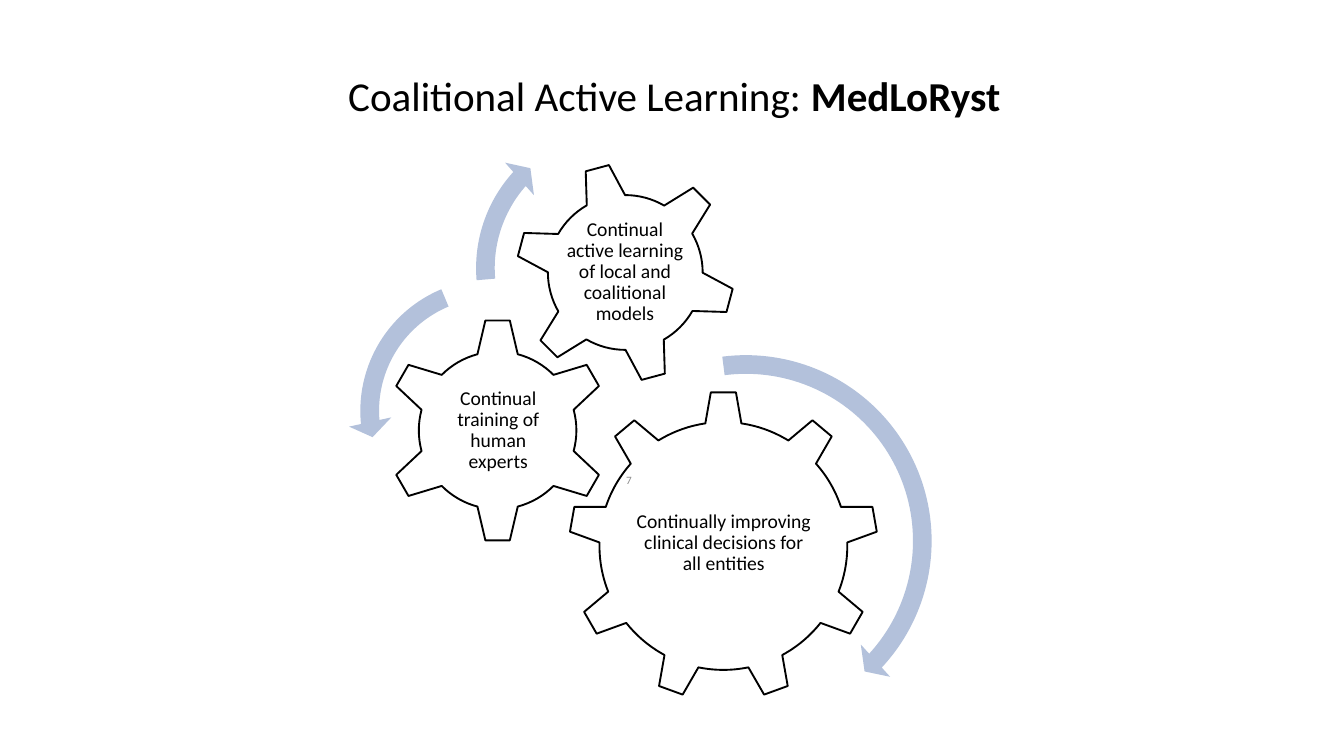
from pptx import Presentation
from pptx.dml.color import RGBColor
from pptx.enum.shapes import MSO_SHAPE
from pptx.enum.text import MSO_ANCHOR, PP_ALIGN
from pptx.util import Inches, Pt

CENTER, RIGHT = PP_ALIGN.CENTER, PP_ALIGN.RIGHT
MIDDLE = MSO_ANCHOR.MIDDLE
GEAR_SIX, GEAR_NINE = MSO_SHAPE.GEAR_6, MSO_SHAPE.GEAR_9
CLOCKWISE = MSO_SHAPE.CIRCULAR_ARROW
COUNTERCLOCKWISE = MSO_SHAPE.LEFT_CIRCULAR_ARROW

BLACK = RGBColor(0x00, 0x00, 0x00)
WHITE = RGBColor(0xFF, 0xFF, 0xFF)
GRAY = RGBColor(0x8C, 0x8C, 0x8C)
PALE_BLUE = RGBColor(0xB3, 0xC1, 0xDB)

GEARS = [
    (GEAR_NINE, (8.46, 5.82, 4.61, 4.61), 0, None,
     "Continually improving clinical decisions for all entities", (9.39, 6.9, 2.76, 2.37)),
    (GEAR_SIX, (5.73, 4.73, 3.35, 3.35), 0, WHITE,
     "Continual training of human experts", (6.58, 5.58, 1.67, 1.65)),
    (GEAR_SIX, (7.66, 2.41, 3.29, 3.29), 345, WHITE,
     "Continual active learning of local and coalitional models", (8.38, 3.13, 1.84, 1.84)),
]
ARROWS = [
    (CLOCKWISE, (8.15, 5.1, 5.9, 5.9), (0.047, 2.99, 25.64, 157.62, 0.055)),
    (COUNTERCLOCKWISE, (5.18, 3.97, 4.29, 4.29), (0.065, 4.3, 104.89, 148.38, 0.075)),
    (CLOCKWISE, (6.9, 1.68, 4.62, 4.62), (0.06, 3.94, 133.14, 105.08, 0.07)),
]


def inches(box):
    return [Inches(length) for length in box]


def set_format(target, values):
    for name, value in values.items():
        setattr(target, name, value)


def write(frame, spans, size, color, align=CENTER, spacing=None, inset=None):
    set_format(frame, {"word_wrap": True, "vertical_anchor": MIDDLE})
    if inset is not None:
        for side in ("left", "top", "right", "bottom"):
            setattr(frame, f"margin_{side}", Inches(inset))
    para = frame.paragraphs[0]
    set_format(para, {"alignment": align, "line_spacing": spacing})
    for text, bold in spans:
        span = para.add_run()
        span.text = text
        set_format(span.font, {"name": "Calibri", "size": Pt(size), "bold": bold})
        span.font.color.rgb = color


def add_title(page, box):
    title = page.shapes.title
    set_format(title, dict(zip(("left", "top", "width", "height"), inches(box))))
    write(title.text_frame,
          [("Coalitional Active Learning: ", False), ("MedLoRyst", True)], 44, BLACK)


def add_gear(page, kind, box, rotation, fill, label, label_box):
    gear = page.shapes.add_shape(kind, *inches(box))
    gear.shadow.inherit = False
    gear.rotation = rotation
    if fill is None:
        gear.fill.background()
    else:
        gear.fill.solid()
        gear.fill.fore_color.rgb = fill
    gear.line.color.rgb = BLACK
    gear.line.width = Pt(2)
    caption = page.shapes.add_textbox(*inches(label_box))
    write(caption.text_frame, [(label, False)], 21, BLACK, spacing=0.9, inset=0.03)


def add_turn_arrow(page, kind, box, adjustments):
    arrow = page.shapes.add_shape(kind, *inches(box))
    arrow.shadow.inherit = False
    arrow.fill.solid()
    arrow.fill.fore_color.rgb = PALE_BLUE
    arrow.line.fill.background()
    for index, value in enumerate(adjustments):
        arrow.adjustments[index] = value


def add_page_number(page, box):
    number = page.shapes.add_textbox(*inches(box))
    write(number.text_frame, [("7", False)], 12, GRAY, align=RIGHT)


def main():
    deck = Presentation()
    set_format(deck, {"slide_width": Inches(20), "slide_height": Inches(11.25)})
    page = deck.slides.add_slide(deck.slide_layouts[5])
    add_title(page, (1.41, 0.33, 17.25, 2.17))
    for gear in GEARS:
        add_gear(page, *gear)
    for arrow in ARROWS:
        add_turn_arrow(page, *arrow)
    add_page_number(page, (7.17, 6.95, 2.33, 0.4))
    deck.save("out.pptx")


if __name__ == "__main__":
    main()
